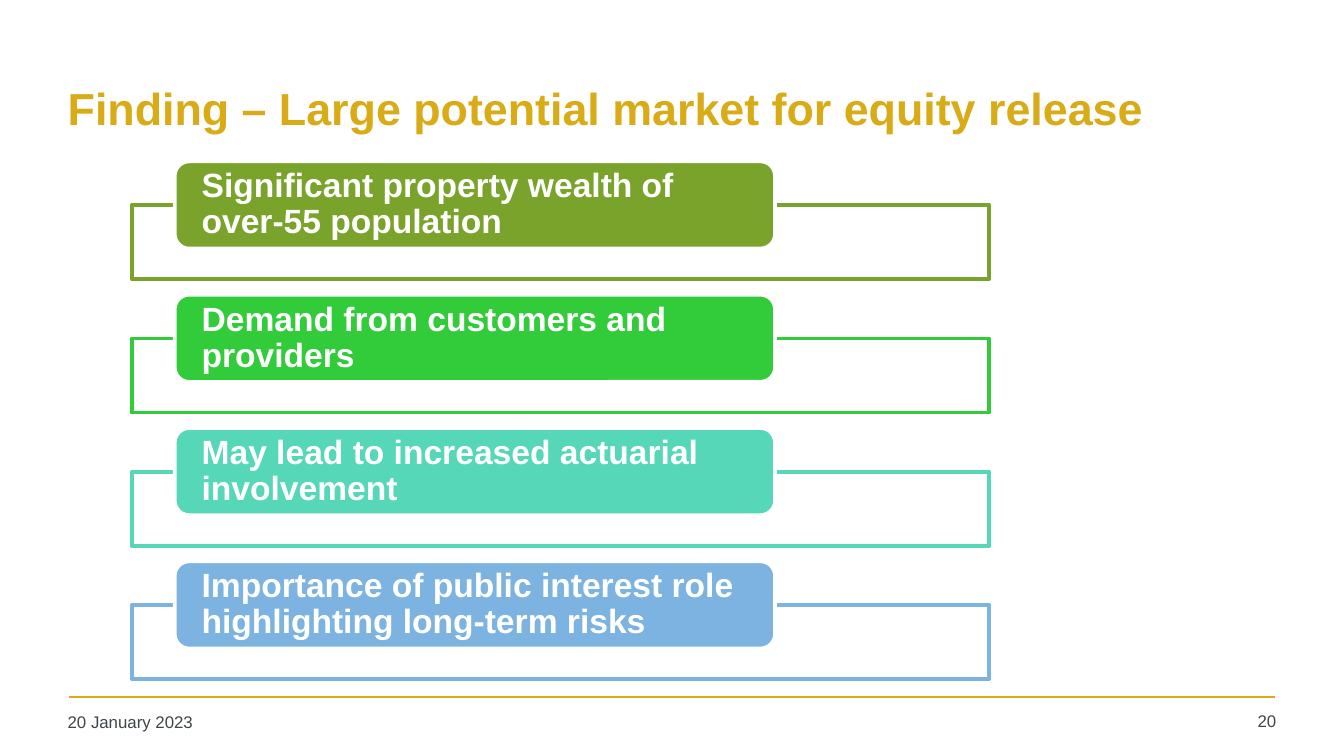
from lxml import etree
from pptx import Presentation
from pptx.dml.color import RGBColor
from pptx.enum.shapes import MSO_CONNECTOR as Connector, MSO_SHAPE as Shape
from pptx.enum.text import MSO_ANCHOR as Anchor, PP_ALIGN as Align
from pptx.oxml.ns import qn
from pptx.util import Cm, Pt

GOLD, GREY, WHITE = "D9AB16", "3F4548", "FFFFFF"
FINDINGS = [
    ("Significant property wealth of over-55 population", "79A32A"),
    ("Demand from customers and providers", "32CB3A"),
    ("May lead to increased actuarial involvement", "56D7B7"),
    ("Importance of public interest role highlighting long-term risks", "7CB3E1"),
]


def color(value):
    return RGBColor.from_string(value)


def write(box, text, size, fill, bold=False, align=Align.LEFT,
          anchor=Anchor.TOP, inset=(0.18, 0.1), spacing=1.0):
    """Fill a shape with one paragraph; inset is (side, top and bottom) in cm."""
    frame = box.text_frame
    frame.word_wrap = True
    frame.vertical_anchor = anchor
    frame.margin_left = frame.margin_right = Cm(inset[0])
    frame.margin_top = frame.margin_bottom = Cm(inset[1])
    para = frame.paragraphs[0]
    para.alignment = align
    para.line_spacing = spacing
    span = para.add_run()
    span.text = text
    span.font.name = "Arial"
    span.font.size = Pt(size)
    span.font.bold = bold
    span.font.color.rgb = color(fill)


def add_text(page, left, top, width, height, text, **style):
    box = page.shapes.add_textbox(Cm(left), Cm(top), Cm(width), Cm(height))
    write(box, text, **style)


def add_panel(page, kind, left, top, width, height, fill, outline):
    panel = page.shapes.add_shape(kind, Cm(left), Cm(top), Cm(width), Cm(height))
    panel.shadow.inherit = False
    panel.fill.solid()
    panel.fill.fore_color.rgb = color(fill)
    panel.line.color.rgb = color(outline)
    panel.line.width = Pt(2)
    return panel


def add_finding(page, left, top, width, text, accent):
    """Outlined frame with a rounded label overlapping its upper edge."""
    add_panel(page, Shape.RECTANGLE, left, top + 0.83, width, 1.4, WHITE, accent)
    label = add_panel(page, Shape.ROUNDED_RECTANGLE, left + 0.05 * width, top,
                      0.7 * width, 1.65, accent, WHITE)
    write(label, text, size=18, fill=WHITE, bold=True, anchor=Anchor.MIDDLE,
          inset=(0.43, 0), spacing=0.9)


def add_findings(page, left, top, width, pitch):
    for index, (text, accent) in enumerate(FINDINGS):
        add_finding(page, left, top + index * pitch, width, text, accent)


def add_footer(page, left, top, width):
    rule = page.shapes.add_connector(
        Connector.STRAIGHT, Cm(left + 0.2), Cm(top), Cm(left + width - 0.2), Cm(top))
    rule.line.color.rgb = color(GOLD)
    rule.line.width = Pt(1)
    etree.SubElement(rule._element.spPr, qn("a:effectLst"))
    add_text(page, left, top + 0.18, 5.6, 0.7, "20 January 2023", size=9, fill=GREY)
    add_text(page, left + width - 1.8, top + 0.15, 1.8, 0.7, "20",
             size=9, fill=GREY, align=Align.RIGHT)


def main():
    deck = Presentation()
    deck.slide_width, deck.slide_height = Cm(25.4), Cm(14.29)
    page = deck.slides.add_slide(deck.slide_layouts[6])
    add_text(page, 1.1, 0.84, 23.04, 2.4,
             "Finding – Large potential market for equity release",
             size=24, fill=GOLD, bold=True, anchor=Anchor.MIDDLE)
    add_findings(page, left=2.49, top=3.05, width=16.21, pitch=2.52)
    add_footer(page, left=1.1, top=13.18, width=23.2)
    deck.save("out.pptx")


if __name__ == "__main__":
    main()
